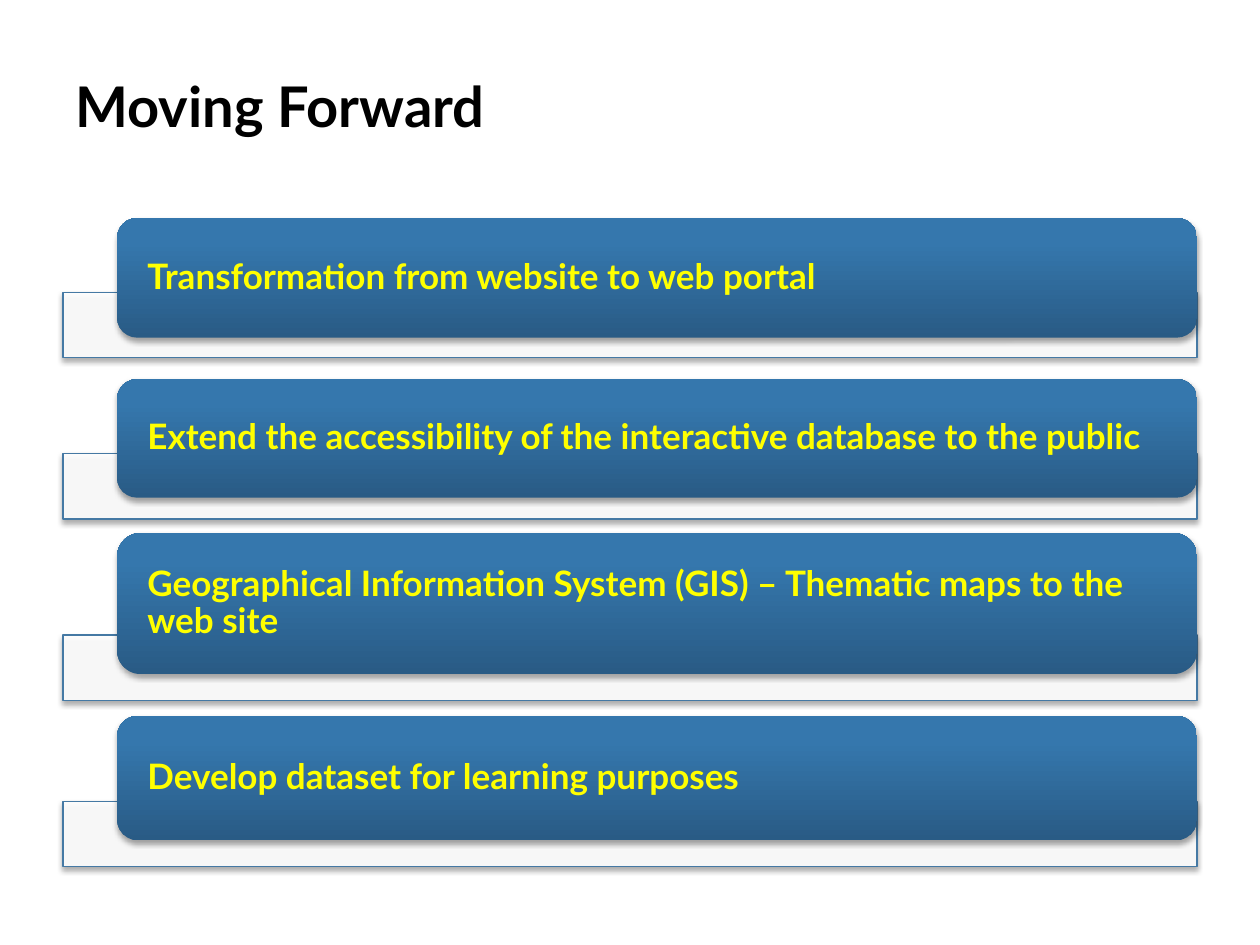
from lxml import etree
from pptx import Presentation
from pptx.dml.color import RGBColor
from pptx.enum.shapes import MSO_SHAPE
from pptx.enum.text import MSO_ANCHOR
from pptx.oxml import parse_xml
from pptx.oxml.ns import nsdecls, qn
from pptx.util import Inches, Pt

BLACK = RGBColor(0x00, 0x00, 0x00)
WHITE = RGBColor(0xFF, 0xFF, 0xFF)
YELLOW = RGBColor(0xFF, 0xFF, 0x00)
EDGE = RGBColor(0x45, 0x79, 0xA4)
BLUES = [
    (0, RGBColor(0x29, 0x5B, 0x85)),
    (80, RGBColor(0x35, 0x77, 0xAD)),
    (100, RGBColor(0x33, 0x77, 0xB0)),
]

# Text, card top, card height, strip top
ROWS = [
    ("Transformation from website to web portal", 1.73, 0.95, 2.32),
    ("Extend the accessibility of the interactive database to the public",
     3.01, 0.94, 3.6),
    ("Geographical Information System (GIS) – Thematic maps to the web site",
     4.23, 1.12, 5.04),
    ("Develop dataset for learning purposes", 5.68, 0.99, 6.36),
]

deck = Presentation()
deck.slide_width, deck.slide_height = Inches(10), Inches(7.5)
slide = deck.slides.add_slide(deck.slide_layouts[6])


def add_text(text, at, size, color, inset=(0.1, 0.05), spacing=1.0):
    """Add a bold, middle-anchored box; at and inset are in inches."""
    frame = slide.shapes.add_textbox(*map(Inches, at)).text_frame
    frame.word_wrap = True
    frame.vertical_anchor = MSO_ANCHOR.MIDDLE
    frame.margin_left = frame.margin_right = Inches(inset[0])
    frame.margin_top = frame.margin_bottom = Inches(inset[1])
    para = frame.paragraphs[0]
    para.text = text
    para.line_spacing = spacing
    font = para.font
    font.name, font.size, font.bold = "Lato", Pt(size), True
    font.color.rgb = color


def add_panel(kind, at):
    """Add a shape with a soft shadow just below it."""
    panel = slide.shapes.add_shape(kind, *map(Inches, at))
    panel.shadow.inherit = False
    effects = panel._element.spPr.find(qn("a:effectLst"))
    effects.append(parse_xml(
        f'<a:outerShdw {nsdecls("a")} blurRad="{Pt(3.1)}" dist="{Pt(1.8)}" '
        'dir="5400000" rotWithShape="0"><a:srgbClr val="000000">'
        '<a:alpha val="35000"/></a:srgbClr></a:outerShdw>'))
    return panel


add_text("Moving Forward", (0.5, 0.25, 9, 1.17), 32, BLACK)

for text, top, height, base in ROWS:
    strip = add_panel(MSO_SHAPE.RECTANGLE, (0.5, base, 9, 0.52))
    strip.fill.solid()
    strip.fill.fore_color.rgb = WHITE
    tint = strip._element.spPr.find(qn("a:solidFill"))[0]
    etree.SubElement(tint, qn("a:alpha")).set("val", "90000")
    strip.line.color.rgb = EDGE
    strip.line.width = Pt(0.75)

    place = (0.93, top, 8.57, height)
    card = add_panel(MSO_SHAPE.ROUNDED_RECTANGLE, place)
    card.line.fill.background()
    card.fill.gradient()
    card.fill.gradient_angle = 90
    stops = card._element.spPr.find(qn("a:gradFill")).find(qn("a:gsLst"))
    stops.clear()
    for spot, blue in BLUES:
        stops.append(parse_xml(
            f'<a:gs {nsdecls("a")} pos="{spot * 1000}">'
            f'<a:srgbClr val="{blue}"/></a:gs>'))
    add_text(text, place, 20, YELLOW, inset=(0.24, 0), spacing=0.9)

deck.save("out.pptx")
